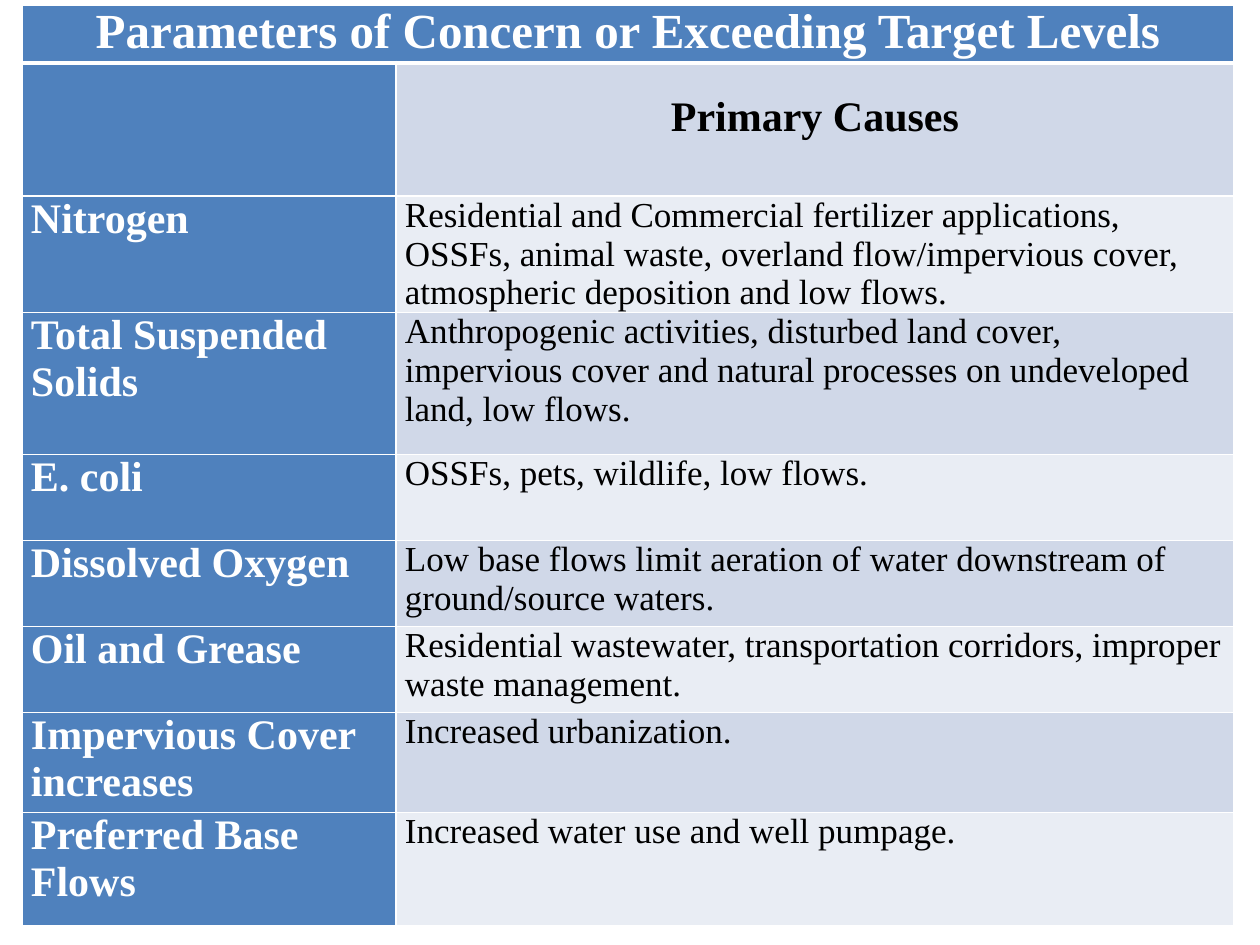
from typing import NamedTuple

from lxml import etree
from pptx import Presentation
from pptx import util as u
from pptx.dml import color
from pptx.enum import text
from pptx.oxml import ns

PX = 914400 // 126
FONT = "Times New Roman"
COLORS = {
    "header": "4F81BD",
    "band_dark": "D0D8E8",
    "band_light": "E9EDF4",
    "white": "FFFFFF",
    "black": "000000",
}
LEFT, TOP = 22, 5
COLUMN_WIDTHS = (374, 838)
TITLE_HEIGHT = 58
SIDE_MARGIN = 9


class Style(NamedTuple):
    size: int
    color: str
    bold: bool
    centered: bool = False
    top_margin: int = 0


class Row(NamedTuple):
    height: int
    parameter: str
    cause: str


TITLE = Style(28, "white", True, centered=True)
SUBTITLE = Style(24, "black", True, centered=True, top_margin=31)
PARAMETER = Style(24, "white", True)
CAUSE = Style(20, "black", False)

ROWS = [
    Row(133, "", "Primary Causes"),
    Row(116, "Nitrogen",
        "Residential and Commercial fertilizer applications, OSSFs, animal waste, "
        "overland flow/impervious cover, atmospheric deposition and low flows."),
    Row(142, "Total Suspended Solids",
        "Anthropogenic activities, disturbed land cover, impervious cover and "
        "natural processes on undeveloped land, low flows."),
    Row(86, "E. coli", "OSSFs, pets, wildlife, low flows."),
    Row(86, "Dissolved Oxygen",
        "Low base flows limit aeration of water downstream of ground/source waters."),
    Row(86, "Oil and Grease",
        "Residential wastewater, transportation corridors, improper waste management."),
    Row(100, "Impervious Cover increases", "Increased urbanization."),
    Row(113, "Preferred Base Flows", "Increased water use and well pumpage."),
]


def set_borders(cell, top: int = 1, bottom: int = 1) -> None:
    properties = cell._tc.get_or_add_tcPr()
    widths = {"a:lnL": 1, "a:lnR": 1, "a:lnT": top, "a:lnB": bottom}
    for position, (tag, width) in enumerate(widths.items()):
        line = etree.Element(ns.qn(tag), w=str(u.Pt(width)))
        fill = etree.SubElement(line, ns.qn("a:solidFill"))
        etree.SubElement(fill, ns.qn("a:srgbClr"), val=COLORS["white"])
        properties.insert(position, line)


def fill_cell(cell, words: str, style: Style, background: str,
              top: int = 1, bottom: int = 1) -> None:
    cell.fill.solid()
    cell.fill.fore_color.rgb = color.RGBColor.from_string(COLORS[background])
    set_borders(cell, top, bottom)
    cell.margin_left = cell.margin_right = SIDE_MARGIN * PX
    cell.margin_top = style.top_margin * PX
    cell.margin_bottom = 0
    if not words:
        return
    cell.text = words
    paragraph = cell.text_frame.paragraphs[0]
    paragraph.alignment = text.PP_ALIGN.CENTER if style.centered else text.PP_ALIGN.LEFT
    paragraph.font.name = FONT
    paragraph.font.size = u.Pt(style.size)
    paragraph.font.bold = style.bold
    paragraph.font.color.rgb = color.RGBColor.from_string(COLORS[style.color])


def add_parameter_table(slide) -> None:
    heights = [TITLE_HEIGHT] + [row.height for row in ROWS]
    table = slide.shapes.add_table(
        len(heights), len(COLUMN_WIDTHS), LEFT * PX, TOP * PX,
        sum(COLUMN_WIDTHS) * PX, sum(heights) * PX).table
    table.first_row = table.horz_banding = False
    for column, width in zip(table.columns, COLUMN_WIDTHS):
        column.width = width * PX
    for table_row, height in zip(table.rows, heights):
        table_row.height = height * PX

    table.cell(0, 0).merge(table.cell(0, 1))
    fill_cell(table.cell(0, 0), "Parameters of Concern or Exceeding Target Levels",
              TITLE, "header", bottom=3)
    fill_cell(table.cell(0, 1), "", TITLE, "header", bottom=3)
    for index, row in enumerate(ROWS, start=1):
        top = 3 if index == 1 else 1
        band = "band_dark" if index % 2 else "band_light"
        fill_cell(table.cell(index, 0), row.parameter, PARAMETER, "header", top)
        fill_cell(table.cell(index, 1), row.cause,
                  SUBTITLE if index == 1 else CAUSE, band, top)


def main() -> None:
    presentation = Presentation()
    presentation.slide_width = 1260 * PX
    presentation.slide_height = 945 * PX
    slide = presentation.slides.add_slide(presentation.slide_layouts[6])
    add_parameter_table(slide)
    presentation.save("out.pptx")


if __name__ == "__main__":
    main()
